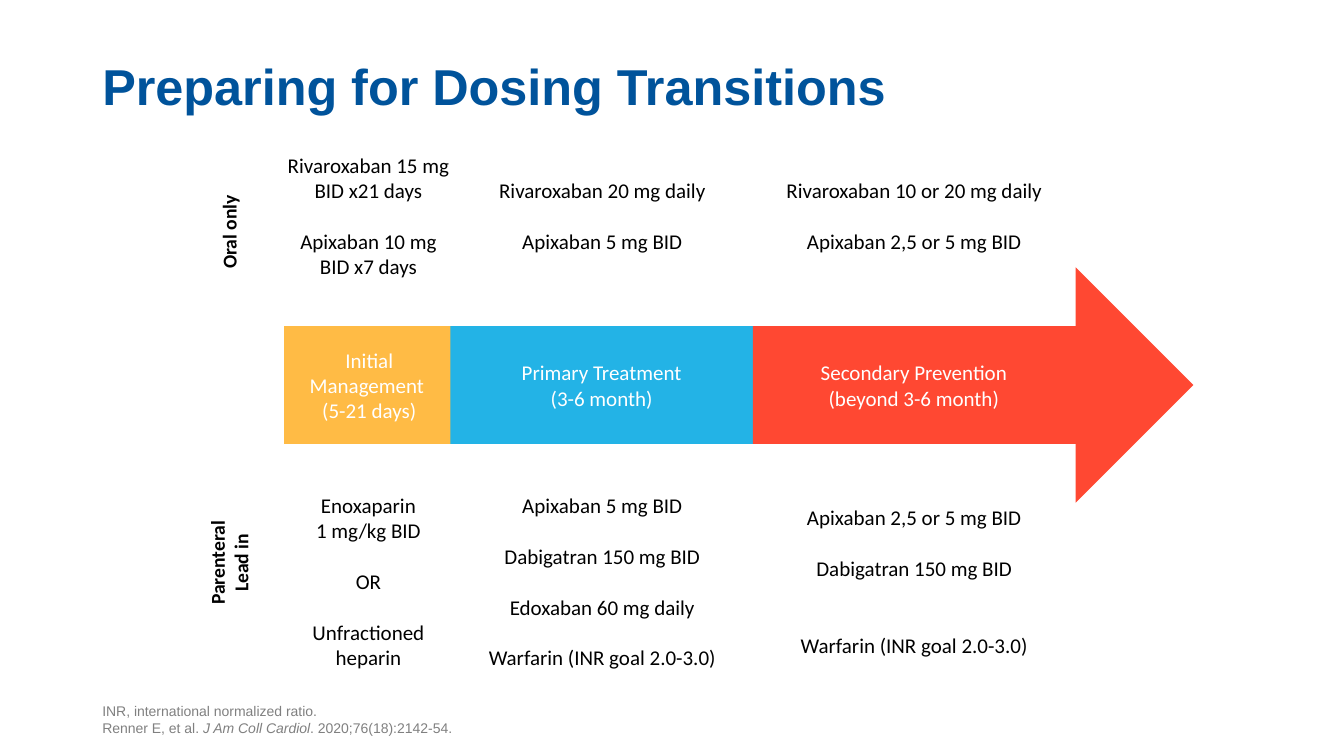
from copy import deepcopy

from pptx import Presentation
from pptx.dml.color import RGBColor
from pptx.enum.shapes import MSO_SHAPE
from pptx.enum.text import MSO_ANCHOR, PP_ALIGN
from pptx.oxml.ns import qn
from pptx.util import Pt

GAP = 18.3  # one line of 15 pt text


def color(code):
    return RGBColor.from_string(code)


class Board:
    """Holds the slide and the text style."""

    font, size, ink = "Calibri", 15, "000000"

    def __init__(self, slide):
        self.slide = slide

    def style(self, para, font=None, size=None, ink=None, bold=False):
        for run in para.runs:
            face = run.font
            face.name = font or self.font
            face.size = Pt(size or self.size)
            face.color.rgb = color(ink or self.ink)
            face.bold = bold
        # Line breaks take the size of the text around them
        for mark in para._p.findall(qn("a:br")):
            mark.append(deepcopy(para.runs[0]._r.rPr))

    def fill_text(self, shape, paras, gaps=(), align=PP_ALIGN.CENTER,
                  anchor=MSO_ANCHOR.MIDDLE, **look):
        frame = shape.text_frame
        frame.word_wrap = True
        frame.vertical_anchor = anchor
        for i, words in enumerate(paras):
            para = frame.add_paragraph() if i else frame.paragraphs[0]
            para.text = words
            para.alignment = align
            if i and gaps:
                para.space_before = Pt(gaps[i - 1])
            self.style(para, **look)
        return frame

    def text(self, x, y, w, h, paras, **look):
        box = self.slide.shapes.add_textbox(Pt(x), Pt(y), Pt(w), Pt(h))
        return self.fill_text(box, paras, **look)

    def center(self, x, y, w, h, paras, turn=0, **look):
        box = self.slide.shapes.add_textbox(
            Pt(x - w / 2), Pt(y - h / 2), Pt(w), Pt(h))
        box.rotation = turn
        self.fill_text(box, paras, **look)

    def block(self, kind, x, y, w, h, fill):
        shape = self.slide.shapes.add_shape(kind, Pt(x), Pt(y), Pt(w), Pt(h))
        shape.shadow.inherit = False
        shape.fill.solid()
        shape.fill.fore_color.rgb = color(fill)
        shape.line.fill.background()
        return shape


def main():
    deck = Presentation()
    deck.slide_width, deck.slide_height = Pt(960), Pt(540)
    board = Board(deck.slides.add_slide(deck.slide_layouts[6]))

    # Title
    title = board.text(66, 0, 828, 87, ["Preparing for Dosing Transitions"],
                       align=PP_ALIGN.LEFT, anchor=MSO_ANCHOR.BOTTOM,
                       font="Arial", size=36, ink="00539B", bold=True)
    title.paragraphs[0].line_spacing = 0.9

    # Footnote with the journal in italics
    note = board.text(66, 500.4, 828, 28.8,
                      ["INR, international normalized ratio. \nRenner E, et al. "],
                      align=PP_ALIGN.LEFT, anchor=MSO_ANCHOR.BOTTOM,
                      font="Arial", size=10, ink="808080").paragraphs[0]
    for words, slant in (("J Am Coll Cardiol", True),
                         (". 2020;76(18):2142-54.", False)):
        run = note.add_run()
        run.text = words
        face = run.font
        face.name, face.size, face.italic = "Arial", Pt(10), slant
        face.color.rgb = color("808080")

    # Row labels
    for y, h, words in ((165.6, 24.5, "Oral only"),
                        (402, 41, "Parenteral\nLead in")):
        board.center(163.4, y, 109.4, h, [words], turn=270, size=14, bold=True)

    # Phases along the time line
    mid, bar = 275, 84
    top = mid - bar / 2
    first = board.block(MSO_SHAPE.RECTANGLE, 203, top, 121.6, bar, "FFBB45")
    board.fill_text(first, ["Initial\nManagement \n(5-21 days)"], ink="FFFFFF")
    main_bar = board.block(MSO_SHAPE.RECTANGLE, 321.8, top, 216, bar, "23B3E6")
    board.fill_text(main_bar, ["Primary Treatment", "(3-6 month)"],
                    ink="FFFFFF")
    board.block(MSO_SHAPE.RIGHT_ARROW, 537.8, mid - bar, 314.6, 2 * bar,
                "FF4832")
    board.center(652.8, mid, 230, 51,
                 ["Secondary Prevention", "(beyond 3-6 month)"], ink="FFFFFF")

    # Doses: column center and width, then the two rows
    columns = (
        (263.2, 136,
         ["Rivaroxaban 15 mg\nBID x21 days", "Apixaban 10 mg\nBID x7 days"],
         ["Enoxaparin\n1 mg/kg BID", "OR", "Unfractioned\nheparin"],
         [GAP, GAP]),
        (430.2, 184,
         ["Rivaroxaban 20 mg daily", "Apixaban 5 mg BID"],
         ["Apixaban 5 mg BID", "Dabigatran 150 mg BID",
          "Edoxaban 60 mg daily", "Warfarin (INR goal 2.0-3.0)"],
         [GAP, GAP, GAP]),
        (653, 200,
         ["Rivaroxaban 10 or 20 mg daily", "Apixaban 2,5 or 5 mg BID"],
         ["Apixaban 2,5 or 5 mg BID", "Dabigatran 150 mg BID",
          "Warfarin (INR goal 2.0-3.0)"],
         [GAP, 2 * GAP]),
    )
    for x, w, oral, lead, gaps in columns:
        board.center(x, 154, w, 98, oral, gaps=[GAP])
        board.center(x, 415.2, w, 134.6, lead, gaps=gaps)

    deck.save("out.pptx")


if __name__ == "__main__":
    main()
